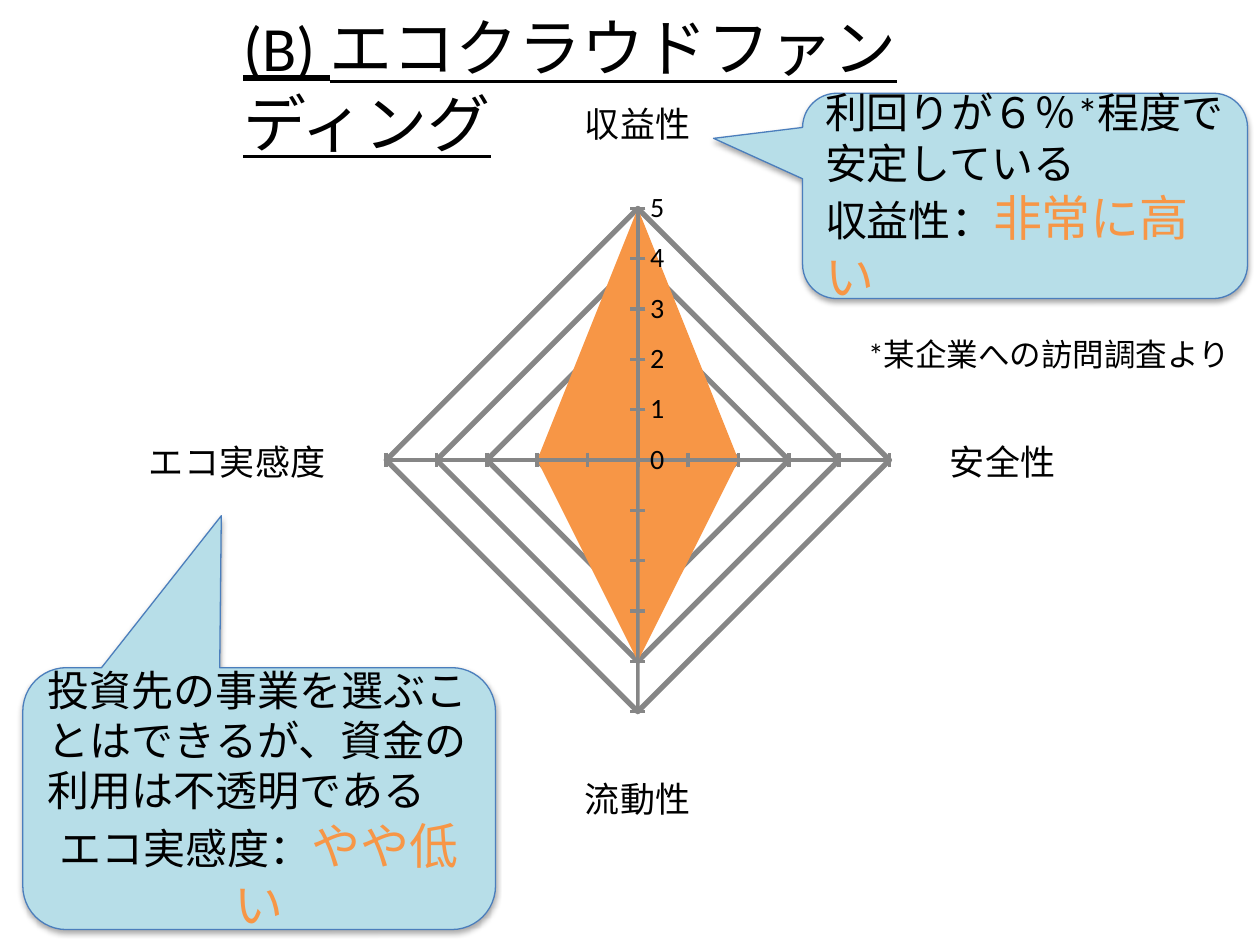
from lxml.etree import SubElement
from pptx import Presentation
from pptx.chart.data import CategoryChartData
from pptx.dml.color import RGBColor
from pptx.enum.chart import XL_CHART_TYPE, XL_TICK_MARK
from pptx.enum.shapes import MSO_SHAPE
from pptx.enum.text import MSO_ANCHOR, PP_ALIGN
from pptx.oxml.ns import qn
from pptx.util import Cm, Pt

BLACK = RGBColor(0x00, 0x00, 0x00)
ORANGE = RGBColor(0xF7, 0x96, 0x46)
PALE_BLUE = RGBColor(0xB7, 0xDE, 0xE8)
OUTLINE_BLUE = RGBColor(0x4B, 0x7E, 0xBC)
GRID_GRAY = RGBColor(0x86, 0x86, 0x86)
FONT = "Calibri"


def write(paragraph, text, size=24, color=BLACK, underline=None, align=PP_ALIGN.LEFT):
    paragraph.alignment = align
    run = paragraph.add_run()
    run.text = text
    run.font.name = FONT
    run.font.size = Pt(size)
    run.font.color.rgb = color
    run.font.underline = underline


def soften_shadow(shape):
    shape.shadow.inherit = False
    effects = shape._element.spPr.find(qn("a:effectLst"))
    shadow = SubElement(effects, qn("a:outerShdw"), blurRad="40000", dist="23000",
                        dir="5400000", rotWithShape="0")
    tint = SubElement(shadow, qn("a:srgbClr"), val="000000")
    SubElement(tint, qn("a:alpha"), val="35000")


def place_title(slide, left, top, width, height):
    title = slide.shapes.title
    title.left, title.top, title.width, title.height = left, top, width, height
    frame = title.text_frame
    frame.word_wrap = True
    frame.vertical_anchor = MSO_ANCHOR.TOP
    write(frame.paragraphs[0], "(B) エコクラウドファンディング", size=36, underline=True)


def place_radar(slide, left, top, width, height):
    ratings = CategoryChartData()
    ratings.categories = ["収益性", "安全性", "流動性", "エコ実感度"]
    ratings.add_series("Series 1", [5, 2, 4, 2])
    radar = slide.shapes.add_chart(XL_CHART_TYPE.RADAR_FILLED, left, top, width, height, ratings).chart
    radar.has_legend = False
    radar.has_title = False
    radar.font.name = FONT
    radar.font.size = Pt(10)
    radar.font.color.rgb = BLACK
    area = radar.plots[0].series[0].format
    area.fill.solid()
    area.fill.fore_color.rgb = ORANGE
    area.line.fill.background()

    scale = radar.value_axis
    scale.minimum_scale, scale.maximum_scale, scale.major_unit = 0, 5, 1
    scale.major_tick_mark = XL_TICK_MARK.CROSS
    scale.has_major_gridlines = True
    scale.tick_labels.number_format = "General"
    scale.tick_labels.number_format_is_linked = False
    scale.tick_labels.font.size = Pt(16)
    radar.category_axis.tick_labels.font.size = Pt(20)
    for line, weight in ((scale.format.line, 2), (scale.major_gridlines.format.line, 3)):
        line.color.rgb = GRID_GRAY
        line.width = Pt(weight)


def place_callout(slide, left, top, width, height, pointer, reason, criterion, verdict,
                  verdict_align=PP_ALIGN.LEFT):
    callout = slide.shapes.add_shape(MSO_SHAPE.ROUNDED_RECTANGULAR_CALLOUT, left, top, width, height)
    callout.adjustments[0], callout.adjustments[1] = pointer
    callout.fill.solid()
    callout.fill.fore_color.rgb = PALE_BLUE
    callout.line.color.rgb = OUTLINE_BLUE
    callout.line.width = Pt(0.75)
    soften_shadow(callout)
    frame = callout.text_frame
    frame.word_wrap = True
    frame.vertical_anchor = MSO_ANCHOR.MIDDLE
    write(frame.paragraphs[0], reason)
    rating = frame.add_paragraph()
    write(rating, criterion, align=verdict_align)
    write(rating, verdict, size=28, color=ORANGE, align=verdict_align)


def place_footnote(slide, left, top, width, height):
    frame = slide.shapes.add_textbox(left, top, width, height).text_frame
    frame.word_wrap = True
    write(frame.paragraphs[0], "*某企業への訪問調査より", size=18)


def main():
    deck = Presentation()
    deck.slide_width, deck.slide_height = Cm(25.4), Cm(19.05)
    slide = deck.slides.add_slide(deck.slide_layouts[5])
    place_radar(slide, Cm(2.62), Cm(-0.2), Cm(19.05), Cm(18.95))
    place_callout(slide, Cm(16.18), Cm(1.88), Cm(8.97), Cm(4.14), (-0.7, -0.28),
                  "利回りが６％*程度で安定している", "収益性：", "非常に高い")
    place_title(slide, Cm(4.65), Cm(0.05), Cm(16.13), Cm(1.8))
    place_callout(slide, Cm(0.46), Cm(13.46), Cm(9.53), Cm(5.28), (-0.08, -1.08),
                  "投資先の事業を選ぶことはできるが、資金の利用は不透明である",
                  "エコ実感度：", "やや低い", verdict_align=PP_ALIGN.CENTER)
    place_footnote(slide, Cm(17.25), Cm(6.63), Cm(8.15), Cm(1.02))
    deck.save("out.pptx")


if __name__ == "__main__":
    main()
